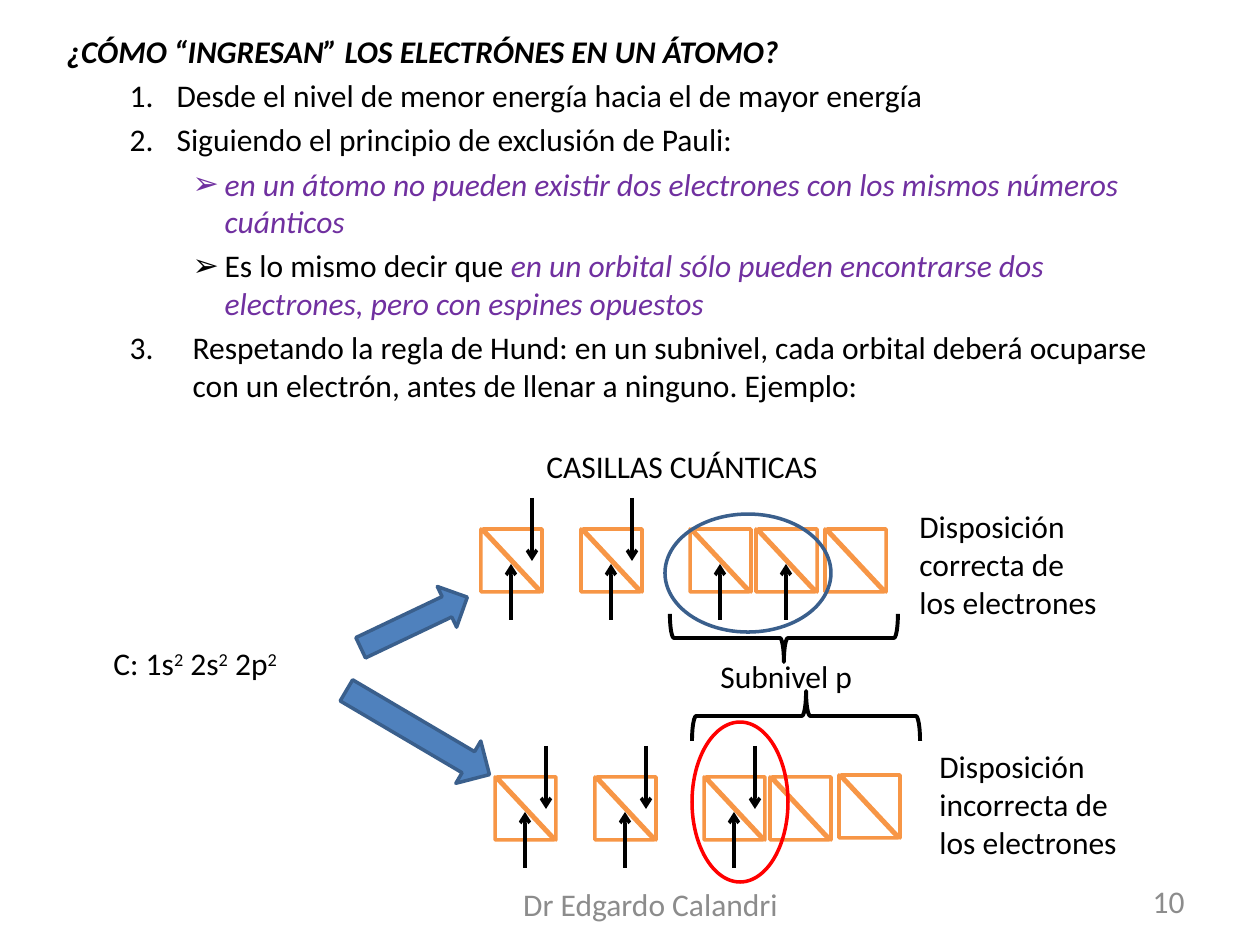
"""Build the slide on how electrons fill the orbitals of an atom."""
import pptx
import pptx.dml.color
import pptx.enum.shapes
import pptx.enum.text
import pptx.oxml.ns
import pptx.util
from lxml import etree

RGBColor = pptx.dml.color.RGBColor
SHAPE = pptx.enum.shapes.MSO_SHAPE
ALIGN = pptx.enum.text.PP_ALIGN
ANCHOR = pptx.enum.text.MSO_ANCHOR
AUTO_SIZE = pptx.enum.text.MSO_AUTO_SIZE
qn = pptx.oxml.ns.qn

BLACK = RGBColor(0x00, 0x00, 0x00)
WHITE = RGBColor(0xFF, 0xFF, 0xFF)
PURPLE = RGBColor(0x70, 0x30, 0xA0)
GREY = RGBColor(0x8C, 0x8C, 0x8C)
ORANGE = RGBColor(0xF7, 0x96, 0x46)
BLUE = RGBColor(0x4F, 0x81, 0xBD)
DARK_BLUE = RGBColor(0x3A, 0x5F, 0x8C)
RED = RGBColor(0xFF, 0x00, 0x00)

FONT = "Calibri"
SIZE = 18
SCALE = 914400 / 126

BODY_BOX = (54, 26, 1134, 427)
HEADING = "¿CÓMO “INGRESAN” LOS ELECTRÓNES EN UN ÁTOMO?"
RULES = [
    (1, 110, -47, 1, [("Desde el nivel de menor energía hacia el de mayor energía", BLACK)]),
    (1, 110, -47, 2, [("Siguiendo el principio de exclusión de Pauli:", BLACK)]),
    (2, 158, -32, "➢", [("en un átomo no pueden existir dos electrones con los mismos números cuánticos", PURPLE)]),
    (2, 158, -32, "➢", [
        ("Es lo mismo decir que ", BLACK),
        ("en un orbital sólo pueden encontrarse dos electrones, pero con espines opuestos", PURPLE),
    ]),
    (1, 126, -63, 3, [(
        "Respetando la regla de Hund: en un subnivel, cada orbital deberá ocuparse "
        "con un electrón, antes de llenar a ninguno. Ejemplo:", BLACK)]),
]

CELL_LEFTS = [481, 581, 690, 756, 825]
CELL_SIZE = (59, 63)
CELL_ROWS = [
    {"shift": 0, "tops": [529] * 5, "electrons": [2, 2, 1, 1, 0]},
    {"shift": 14, "tops": [777] * 4 + [775], "electrons": [2, 2, 2, 0, 0]},
]
SPIN_UP = (30, 91, 35)
SPIN_DOWN = (51, -31, 32)

OUTLINES = [
    (SHAPE.RIGHT_ARROW, (355, 600, 118, 45), 334.6, BLUE, DARK_BLUE, 2),
    (SHAPE.RIGHT_ARROW, (335, 708, 166, 49), 30.5, BLUE, DARK_BLUE, 2),
    (SHAPE.OVAL, (665, 514, 166, 118), 0, None, DARK_BLUE, 2),
    (SHAPE.OVAL, (692, 722, 96, 160), 0, None, RED, 2),
    (SHAPE.LEFT_BRACE, (760, 524, 48, 228), 270, None, BLACK, 2.25),
    (SHAPE.LEFT_BRACE, (781, 602, 50, 228), 90, None, BLACK, 2.25),
]

LABELS = [
    ("CASILLAS CUÁNTICAS", (534, 441, 300, 50), False),
    ("Subnivel p", (708, 651, 159, 50), False),
    ("Disposición correcta de los electrones", (907, 501, 208, 127), True),
    ("Disposición incorrecta de los electrones", (927, 741, 208, 127), True),
]
CONFIGURATION = ["C: 1s", "2", " 2s", "2", " 2p", "2"]
CONFIGURATION_BOX = (101, 638, 195, 50)
FOOTERS = [
    ("Dr Edgardo Calandri", (451, 879, 399, 50), ALIGN.CENTER),
    ("10", (978, 876, 219, 50), ALIGN.RIGHT),
]


def px(length):
    return pptx.util.Emu(round(length * SCALE))


def frame(box):
    return [px(length) for length in box]


def style(paragraph, color=BLACK):
    font = paragraph.font
    font.name = FONT
    font.size = pptx.util.Pt(SIZE)
    font.color.rgb = color


def set_bullet(paragraph, margin, indent, bullet):
    properties = paragraph._p.get_or_add_pPr()
    properties.set("marL", str(px(margin)))
    properties.set("indent", str(px(indent)))
    if bullet is None:
        etree.SubElement(properties, qn("a:buNone"))
    elif isinstance(bullet, int):
        etree.SubElement(properties, qn("a:buFont"), typeface="+mj-lt")
        etree.SubElement(properties, qn("a:buAutoNum"), type="arabicPeriod", startAt=str(bullet))
    else:
        etree.SubElement(properties, qn("a:buChar"), char=bullet)


def fill_body(body):
    body.left, body.top, body.width, body.height = frame(BODY_BOX)
    text_frame = body.text_frame
    text_frame.auto_size = AUTO_SIZE.NONE
    heading = text_frame.paragraphs[0]
    heading.text = HEADING
    heading.space_before = pptx.util.Pt(0)
    set_bullet(heading, 0, 0, None)
    style(heading)
    heading.font.bold = heading.font.italic = True
    for level, margin, indent, bullet, parts in RULES:
        paragraph = text_frame.add_paragraph()
        paragraph.level = level
        paragraph.space_before = pptx.util.Pt(SIZE * 0.2)
        set_bullet(paragraph, margin, indent, bullet)
        style(paragraph)
        for text, color in parts:
            run = paragraph.add_run()
            run.text = text
            run.font.color.rgb = color
            run.font.italic = color == PURPLE


def add_label(slide, text, box, wrap=True, color=BLACK, align=ALIGN.LEFT):
    text_frame = slide.shapes.add_textbox(*frame(box)).text_frame
    text_frame.word_wrap = wrap
    paragraph = text_frame.paragraphs[0]
    paragraph.text = text
    paragraph.alignment = align
    style(paragraph, color)
    return text_frame


def add_outline(shapes, kind, box, rotation, fill, line, width):
    shape = shapes.add_shape(kind, *frame(box))
    shape.rotation = rotation
    shape.shadow.inherit = False
    if fill is None:
        shape.fill.background()
    else:
        shape.fill.solid()
        shape.fill.fore_color.rgb = fill
    shape.line.color.rgb = line
    shape.line.width = pptx.util.Pt(width)


def add_cell(slide, left, top):
    group = slide.shapes.add_group_shape()
    for offset, rotation in ((0, 0), (2, 180)):
        box = (left + offset, top, *CELL_SIZE)
        add_outline(group.shapes, SHAPE.RIGHT_TRIANGLE, box, rotation, WHITE, ORANGE, 2)


def add_electron(slide, left, top, spin):
    offset, start, end = spin
    x = px(left + offset)
    connector = slide.shapes.add_connector(
        pptx.enum.shapes.MSO_CONNECTOR.STRAIGHT, x, px(top + start), x, px(top + end))
    connector.line.color.rgb = BLACK
    connector.line.width = pptx.util.Pt(2)
    etree.SubElement(connector.line._get_or_add_ln(), qn("a:tailEnd"), type="arrow")
    etree.SubElement(connector._element.spPr, qn("a:effectLst"))


def add_configuration(slide):
    paragraph = add_label(slide, "", CONFIGURATION_BOX, False).paragraphs[0]
    for index, text in enumerate(CONFIGURATION):
        run = paragraph.add_run()
        run.text = text
        if index % 2:
            run._r.get_or_add_rPr().set("baseline", "30000")


def main():
    presentation = pptx.Presentation()
    presentation.slide_width, presentation.slide_height = px(1260), px(945)
    slide = presentation.slides.add_slide(presentation.slide_layouts[1])
    title = slide.shapes.title._element
    title.getparent().remove(title)
    fill_body(slide.placeholders[1])

    for row in CELL_ROWS:
        for column, top, count in zip(CELL_LEFTS, row["tops"], row["electrons"]):
            left = column + row["shift"]
            add_cell(slide, left, top)
            for spin in (SPIN_UP, SPIN_DOWN)[:count]:
                add_electron(slide, left, top, spin)
    for outline in OUTLINES:
        add_outline(slide.shapes, *outline)

    add_configuration(slide)
    for label in LABELS:
        add_label(slide, *label)
    for text, box, align in FOOTERS:
        add_label(slide, text, box, True, GREY, align).vertical_anchor = ANCHOR.MIDDLE
    presentation.save("out.pptx")


if __name__ == "__main__":
    main()
